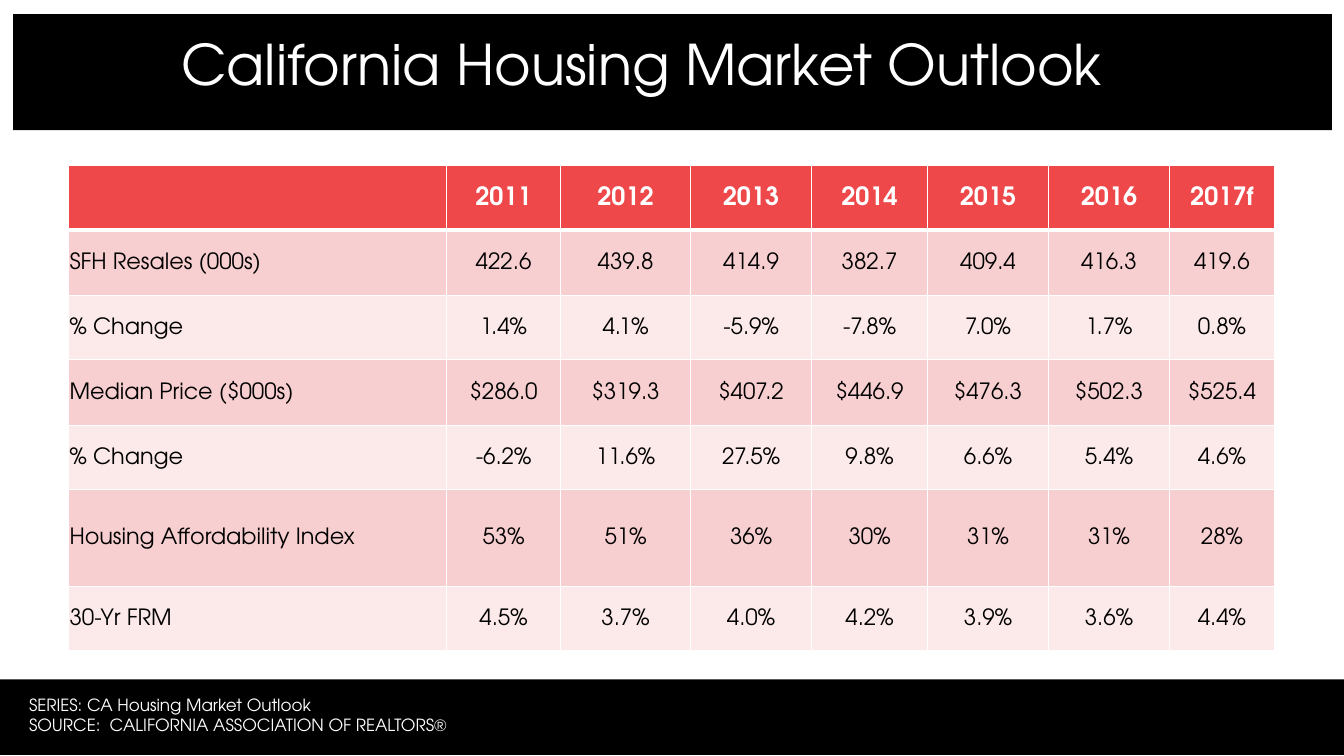
from dataclasses import dataclass

import pptx
import pptx.dml.color
import pptx.enum.shapes
import pptx.enum.text
import pptx.oxml
import pptx.oxml.ns
import pptx.util

Inches = pptx.util.Inches
Pt = pptx.util.Pt
ALIGN = pptx.enum.text.PP_ALIGN
MIDDLE = pptx.enum.text.MSO_ANCHOR.MIDDLE


@dataclass(frozen=True)
class Theme:
    font: str = "TeX Gyre Adventor"
    black: str = "000000"
    white: str = "FFFFFF"
    header: str = "EE484A"
    bands: tuple = ("F8CFD0", "FCE9E9")
    title_size: int = 40
    header_size: int = 18
    body_size: int = 16
    footer_size: int = 12


def assign(target, values):
    for name, value in values.items():
        setattr(target, name, value)


def rgb(color):
    return pptx.dml.color.RGBColor.from_string(color)


class SlideBuilder:
    def __init__(self, s, theme):
        self.s = s
        self.theme = theme

    def run(self, p, text, size, color, bold=False):
        r = p.add_run()
        r.text = text
        assign(r.font, {"name": self.theme.font, "size": Pt(size), "bold": bold})
        r.font.color.rgb = rgb(color)

    def band(self, *box):
        sp = self.s.shapes.add_shape(
            pptx.enum.shapes.MSO_SHAPE.RECTANGLE, *map(Inches, box))
        sp.shadow.inherit = False
        sp.fill.solid()
        sp.fill.fore_color.rgb = rgb(self.theme.black)
        sp.line.fill.background()

    def text(self, box, lines, size, frame, spacing=None):
        sp = self.s.shapes.add_textbox(*map(Inches, box))
        tf = sp.text_frame
        assign(tf, frame)
        for i, line in enumerate(lines):
            p = tf.add_paragraph() if i else tf.paragraphs[0]
            p.line_spacing = spacing
            self.run(p, line, size, self.theme.white)

    def borders(self, cell, widths):
        tc_pr = cell._tc.get_or_add_tcPr()
        for side, width in widths.items():
            tc_pr.append(pptx.oxml.parse_xml(
                f'<a:ln{side} {pptx.oxml.ns.nsdecls("a")} w="{Pt(width)}">'
                f'<a:solidFill><a:srgbClr val="{self.theme.white}"/></a:solidFill>'
                f'</a:ln{side}>'))

    def cell(self, cell, text, row, col):
        t = self.theme
        is_header = row == 0
        self.borders(cell, {"L": 1, "R": 1, "T": 3 if row == 1 else 1,
                            "B": 3 if is_header else 1})
        cell.fill.solid()
        cell.fill.fore_color.rgb = rgb(t.header if is_header else t.bands[(row - 1) % 2])
        assign(cell, {"vertical_anchor": MIDDLE, "margin_left": Inches(0.01),
                      "margin_right": Inches(0.01), "margin_top": Inches(0.01),
                      "margin_bottom": 0})
        p = cell.text_frame.paragraphs[0]
        p.alignment = ALIGN.CENTER if col else ALIGN.LEFT
        if text:
            self.run(p, text, t.header_size if is_header else t.body_size,
                     t.white if is_header else t.black, is_header)

    def table(self, left, top, widths, heights, rows):
        box = (left, top, sum(widths), sum(heights))
        tbl = self.s.shapes.add_table(
            len(rows), len(widths), *map(Inches, box)).table
        for column, width in zip(tbl.columns, widths):
            column.width = Inches(width)
        for row, height in zip(tbl.rows, heights):
            row.height = Inches(height)
        for i, values in enumerate(rows):
            for j, value in enumerate(values):
                self.cell(tbl.cell(i, j), value, i, j)


OUTLOOK = [
    ["", "2011", "2012", "2013", "2014", "2015", "2016", "2017f"],
    ["SFH Resales (000s)", "422.6", "439.8", "414.9", "382.7", "409.4", "416.3", "419.6"],
    ["% Change", "1.4%", "4.1%", "-5.9%", "-7.8%", "7.0%", "1.7%", "0.8%"],
    ["Median Price ($000s)", "$286.0", "$319.3", "$407.2", "$446.9", "$476.3", "$502.3", "$525.4"],
    ["% Change", "-6.2%", "11.6%", "27.5%", "9.8%", "6.6%", "5.4%", "4.6%"],
    ["Housing Affordability Index", "53%", "51%", "36%", "30%", "31%", "31%", "28%"],
    ["30-Yr FRM", "4.5%", "3.7%", "4.0%", "4.2%", "3.9%", "3.6%", "4.4%"],
]


def main():
    prs = pptx.Presentation()
    assign(prs, {"slide_width": Inches(13.33), "slide_height": Inches(7.5)})
    theme = Theme()
    slide = SlideBuilder(prs.slides.add_slide(prs.slide_layouts[6]), theme)
    slide.band(0, 6.74, 13.33, 0.75)
    slide.band(0.13, 0.14, 13.08, 1.15)
    slide.text((1.7, 0.33, 11.37, 0.67), ["California Housing Market Outlook"],
               theme.title_size, {"word_wrap": True, "vertical_anchor": MIDDLE}, 0.9)
    slide.text((0.19, 6.84, 4.46, 0.5),
               ["SERIES: CA Housing Market Outlook",
                "SOURCE:  CALIFORNIA ASSOCIATION OF REALTORS®"],
               theme.footer_size,
               {"word_wrap": False,
                "auto_size": pptx.enum.text.MSO_AUTO_SIZE.SHAPE_TO_FIT_TEXT})
    slide.table(0.68, 1.64, [3.75, 1.13, 1.29, 1.2, 1.15, 1.2, 1.2, 1.04],
                [0.64, 0.65, 0.64, 0.65, 0.64, 0.96, 0.64], OUTLOOK)
    prs.save("out.pptx")


if __name__ == "__main__":
    main()
